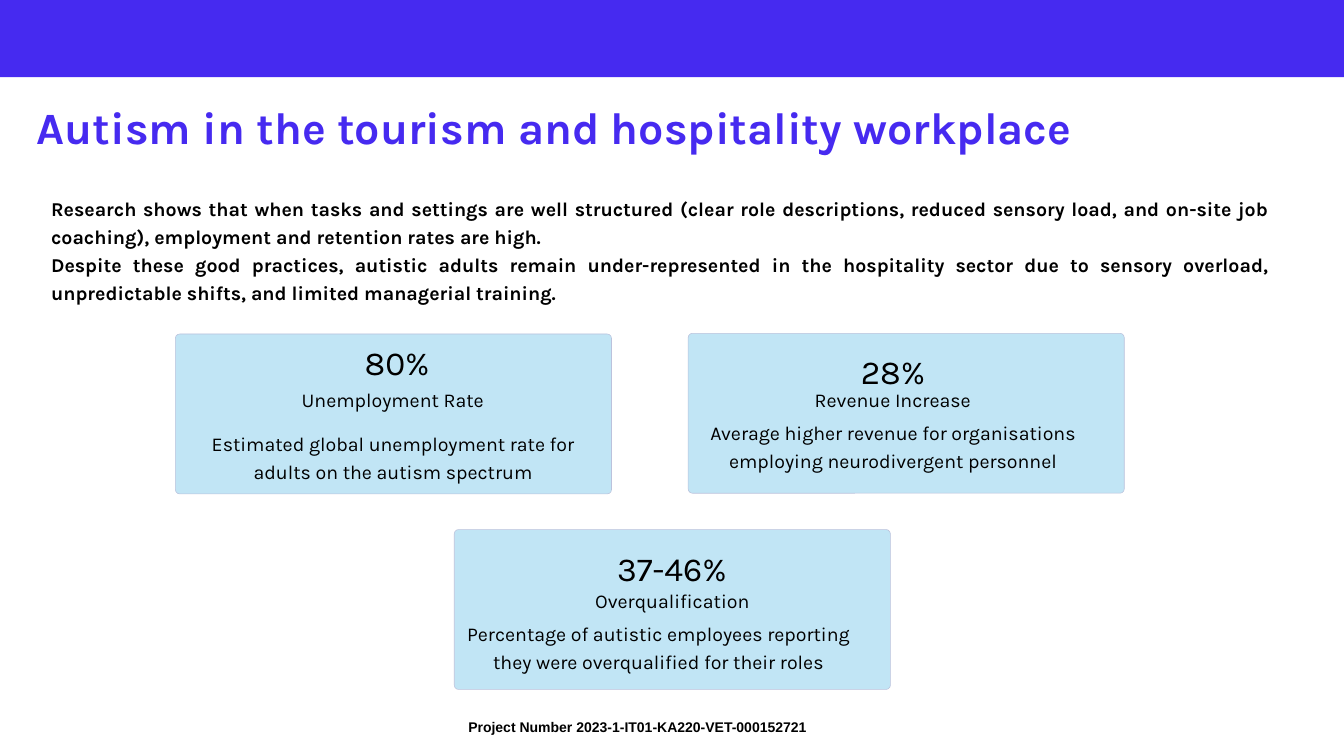
from pptx import Presentation
from pptx.dml.color import RGBColor
from pptx.enum import shapes, text
from pptx.util import Inches, Pt

VIOLET = RGBColor(0x46, 0x2A, 0xF0)
SKY = RGBColor(0xC1, 0xE5, 0xF5)
CARD_EDGE = RGBColor(0xBB, 0xC2, 0xDC)
BLACK = RGBColor(0, 0, 0)

CARD_SIZE = (6.49, 2.38)
FIGURE_SIZE = (6.06, 0.88)
LABEL_SIZE = (3.51, 0.44)
DETAIL_SIZE = (6.06, 0.85)

# Each card: its corner, then the wording and corner of each of its three texts
CARDS = [
    ((6.76, 7.88), ("37-46%", 6.97, 7.88), ("Overqualification", 8.25, 8.67),
     ("Percentage of autistic employees reporting they were overqualified "
      "for their roles", 6.77, 9.19)),
    ((10.24, 4.96), ("28%", 10.26, 4.94), ("Revenue Increase", 11.53, 5.68),
     ("Average higher revenue for organisations employing neurodivergent "
      "personnel", 10.26, 6.2)),
    ((2.61, 4.97), ("80%", 2.88, 4.81), ("Unemployment Rate", 4.09, 5.69),
     ("Estimated global unemployment rate for adults on the autism spectrum",
      2.82, 6.36)),
]

FINDINGS = [
    "Research shows that when tasks and settings are well structured (clear role "
    "descriptions, reduced sensory load, and on-site job coaching), employment and "
    "retention rates are high.",
    "Despite these good practices, autistic adults remain under-represented in the "
    "hospitality sector due to sensory overload, unpredictable shifts, and limited "
    "managerial training.",
]


def set_all(target, values):
    for name, value in values.items():
        setattr(target, name, value)


def add_panel(slide, kind, box, fill, edge=None):
    panel = slide.shapes.add_shape(kind, *map(Inches, box))
    panel.shadow.inherit = False
    panel.fill.solid()
    panel.fill.fore_color.rgb = fill
    if edge is None:
        panel.line.fill.background()
    else:
        panel.line.color.rgb = edge
        panel.line.width = Pt(0.6)
    return panel


def add_text(slide, box, lines, size, align=text.PP_ALIGN.LEFT, spacing=None,
             color=BLACK, bold=False, font="Karla", wrap=True, inset=0,
             anchor=text.MSO_ANCHOR.TOP):
    frame = slide.shapes.add_textbox(*map(Inches, box)).text_frame
    set_all(frame, {
        "word_wrap": wrap, "vertical_anchor": anchor,
        "margin_left": Inches(inset), "margin_right": Inches(inset),
        "margin_top": Inches(inset / 2), "margin_bottom": Inches(inset / 2),
    })
    for index, line in enumerate(lines):
        paragraph = frame.add_paragraph() if index else frame.paragraphs[0]
        set_all(paragraph, {"alignment": align, "line_spacing": spacing})
        run = paragraph.add_run()
        run.text = line
        set_all(run.font, {"name": font, "size": Pt(size), "bold": bold})
        run.font.color.rgb = color


def add_card(slide, corner, figure, label, detail):
    card = add_panel(slide, shapes.MSO_SHAPE.ROUNDED_RECTANGLE,
                     (*corner, *CARD_SIZE), SKY, CARD_EDGE)
    card.adjustments[0] = 0.027
    styles = [
        (figure, FIGURE_SIZE, 36, 63, False),
        (label, LABEL_SIZE, 21, 31.5, False),
        (detail, DETAIL_SIZE, 21, 30, True),
    ]
    for (wording, left, top), extent, size, spacing, wrap in styles:
        add_text(slide, (left, top, *extent), [wording], size,
                 text.PP_ALIGN.CENTER, Pt(spacing), wrap=wrap)


def main():
    deck = Presentation()
    set_all(deck, {"slide_width": Inches(20), "slide_height": Inches(11.25)})
    slide = deck.slides.add_slide(deck.slide_layouts[6])

    # Project footer and top band
    add_text(slide, (6.87, 10.65, 5.31, 0.35),
             ["Project Number 2023-1-IT01-KA220-VET-000152721"], 15,
             bold=True, font="Arial", wrap=False, inset=0.1)
    add_panel(slide, shapes.MSO_SHAPE.RECTANGLE, (0, -0.02, 20, 1.17), VIOLET)

    # Title and research findings
    add_text(slide, (0.45, 1.42, 17.25, 1.04),
             ["Autism in the tourism and hospitality workplace"], 48,
             spacing=0.9, color=VIOLET, bold=True, inset=0.1,
             anchor=text.MSO_ANCHOR.MIDDLE)
    add_text(slide, (0.76, 2.86, 18.12, 1.71), FINDINGS, 21,
             text.PP_ALIGN.JUSTIFY, Pt(30), bold=True)

    # Statistic cards
    for card in CARDS:
        add_card(slide, *card)

    deck.save("out.pptx")


if __name__ == "__main__":
    main()
